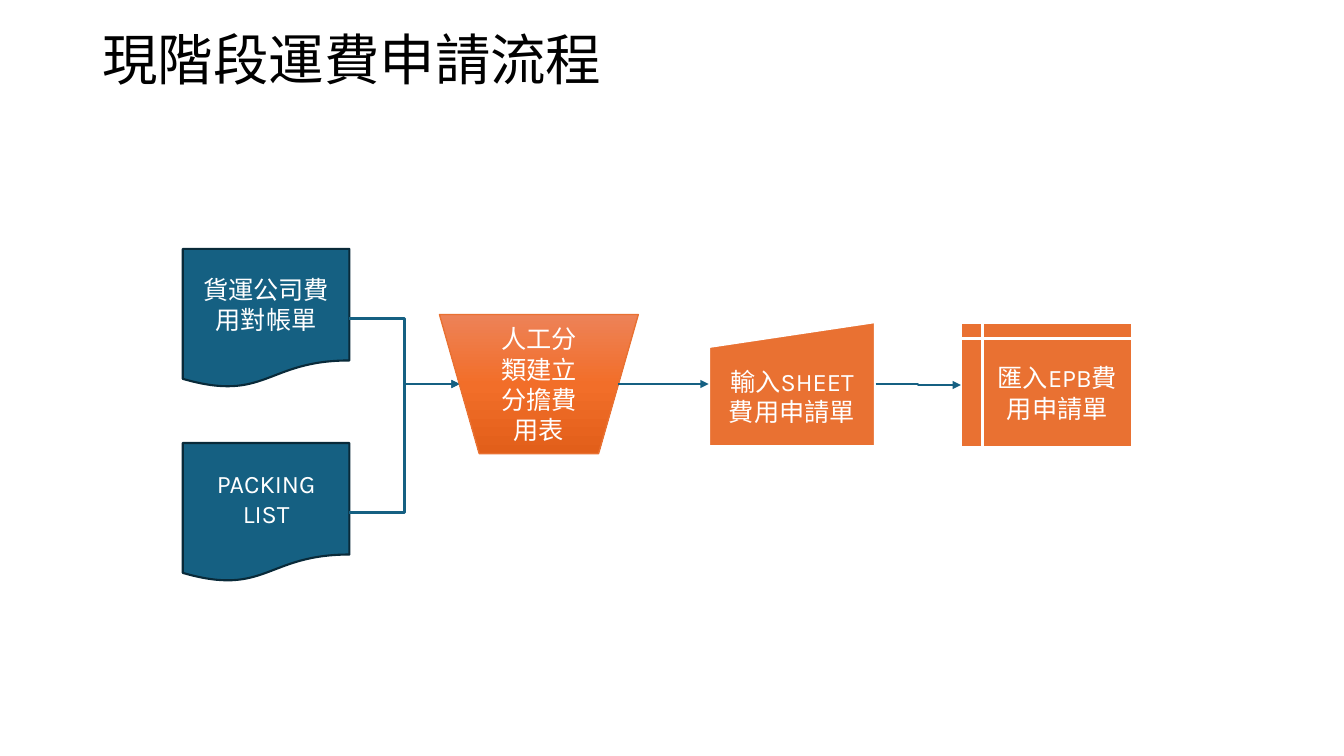
from lxml import etree
from pptx import Presentation
from pptx.dml.color import RGBColor
from pptx.enum.shapes import MSO_CONNECTOR, MSO_SHAPE
from pptx.enum.text import MSO_ANCHOR, PP_ALIGN
from pptx.oxml.ns import qn
from pptx.util import Inches, Pt

DOCUMENT = MSO_SHAPE.FLOWCHART_DOCUMENT
MANUAL_OPERATION = MSO_SHAPE.FLOWCHART_MANUAL_OPERATION
MANUAL_INPUT = MSO_SHAPE.FLOWCHART_MANUAL_INPUT
INTERNAL_STORAGE = MSO_SHAPE.FLOWCHART_INTERNAL_STORAGE
ELBOW = MSO_CONNECTOR.ELBOW
MIDDLE = MSO_ANCHOR.MIDDLE
LEFT, CENTER = PP_ALIGN.LEFT, PP_ALIGN.CENTER

BLACK = RGBColor(0x00, 0x00, 0x00)
WHITE = RGBColor(0xFF, 0xFF, 0xFF)
BLUE = RGBColor(0x15, 0x60, 0x82)
NAVY = RGBColor(0x09, 0x2A, 0x39)
ORANGE = RGBColor(0xE9, 0x71, 0x32)
ORANGE_STOPS = [(0, RGBColor(0xED, 0x82, 0x57)),
                (50, RGBColor(0xF2, 0x6E, 0x29)),
                (100, RGBColor(0xE2, 0x5F, 0x1A))]

FONT = "Karla"
SLIDE_W, SLIDE_H = Inches(13.333), Inches(7.5)

# Rows of the flow, in percent of the slide height
AXIS = 50.8
STORAGE_ROW = 50.93
DOCUMENT_ROWS = [(42.13, "貨運公司費用對帳單"), (67.8, "PACKING LIST")]


def px(percent):
    return int(SLIDE_W * percent / 100)


def py(percent):
    return int(SLIDE_H * percent / 100)


def write(tf, text, size=18, color=WHITE, align=CENTER, spacing=None):
    tf.word_wrap = True
    tf.vertical_anchor = MIDDLE
    p = tf.paragraphs[0]
    p.alignment = align
    p.line_spacing = spacing
    r = p.add_run()
    r.text = text
    r.font.name = FONT
    r.font.size = Pt(size)
    r.font.color.rgb = color


def add_title(s, text):
    tb = s.shapes.add_textbox(px(6.88), py(5.33), px(86.25), py(5.87))
    write(tb.text_frame, text, size=39.6, color=BLACK, align=LEFT, spacing=0.9)


def fill_gradient(sp, stops):
    sp.fill.gradient()
    sp.fill.gradient_angle = 270
    stop_list = sp._element.spPr.find(qn("a:gradFill")).find(qn("a:gsLst"))
    stop_list.clear()
    for percent, color in stops:
        stop = etree.SubElement(stop_list, qn("a:gs"), pos=str(percent * 1000))
        etree.SubElement(stop, qn("a:srgbClr"), val=str(color))


def add_node(s, kind, text, left, row, width, height, fill, line, weight):
    """Place a flowchart symbol vertically centred on its row."""
    sp = s.shapes.add_shape(kind, px(left), py(row - height / 2),
                            px(width), py(height))
    sp.shadow.inherit = False
    if isinstance(fill, list):
        fill_gradient(sp, fill)
    else:
        sp.fill.solid()
        sp.fill.fore_color.rgb = fill
    sp.line.color.rgb = line
    sp.line.width = Pt(weight)
    write(sp.text_frame, text)


def add_arrow(s, x1, y1, x2, y2):
    cx = s.shapes.add_connector(ELBOW, px(x1), py(y1), px(x2), py(y2))
    cx.line.color.rgb = BLUE
    cx.line.width = Pt(1.5)
    etree.SubElement(cx.line._get_or_add_ln(), qn("a:tailEnd"), type="triangle")
    etree.SubElement(cx._element.spPr, qn("a:effectLst"))


def main():
    prs = Presentation()
    prs.slide_width, prs.slide_height = SLIDE_W, SLIDE_H
    s = prs.slides.add_slide(prs.slide_layouts[6])

    add_title(s, "現階段運費申請流程")

    # Source documents, both leading to the manual step
    for row, text in DOCUMENT_ROWS:
        add_node(s, DOCUMENT, text, 13.6, row, 12.4, 18.4, BLUE, NAVY, 1.5)
        add_arrow(s, 26, row, 34.2, AXIS)

    # Processing steps
    add_node(s, MANUAL_OPERATION, "人工分類建立分擔費用表",
             32.7, AXIS, 14.8, 18.4, ORANGE_STOPS, ORANGE, 1)
    add_node(s, MANUAL_INPUT, "輸入SHEET費用申請單",
             52.73, AXIS, 12.4, 16.5, ORANGE, WHITE, 2)
    add_node(s, INTERNAL_STORAGE, "匯入EPB費用申請單",
             71.5, STORAGE_ROW, 12.75, 16.5, ORANGE, WHITE, 2)

    # Links between the steps
    add_arrow(s, 46, AXIS, 52.73, AXIS)
    add_arrow(s, 65.15, AXIS, 71.5, STORAGE_ROW)

    prs.save("out.pptx")


if __name__ == "__main__":
    main()
